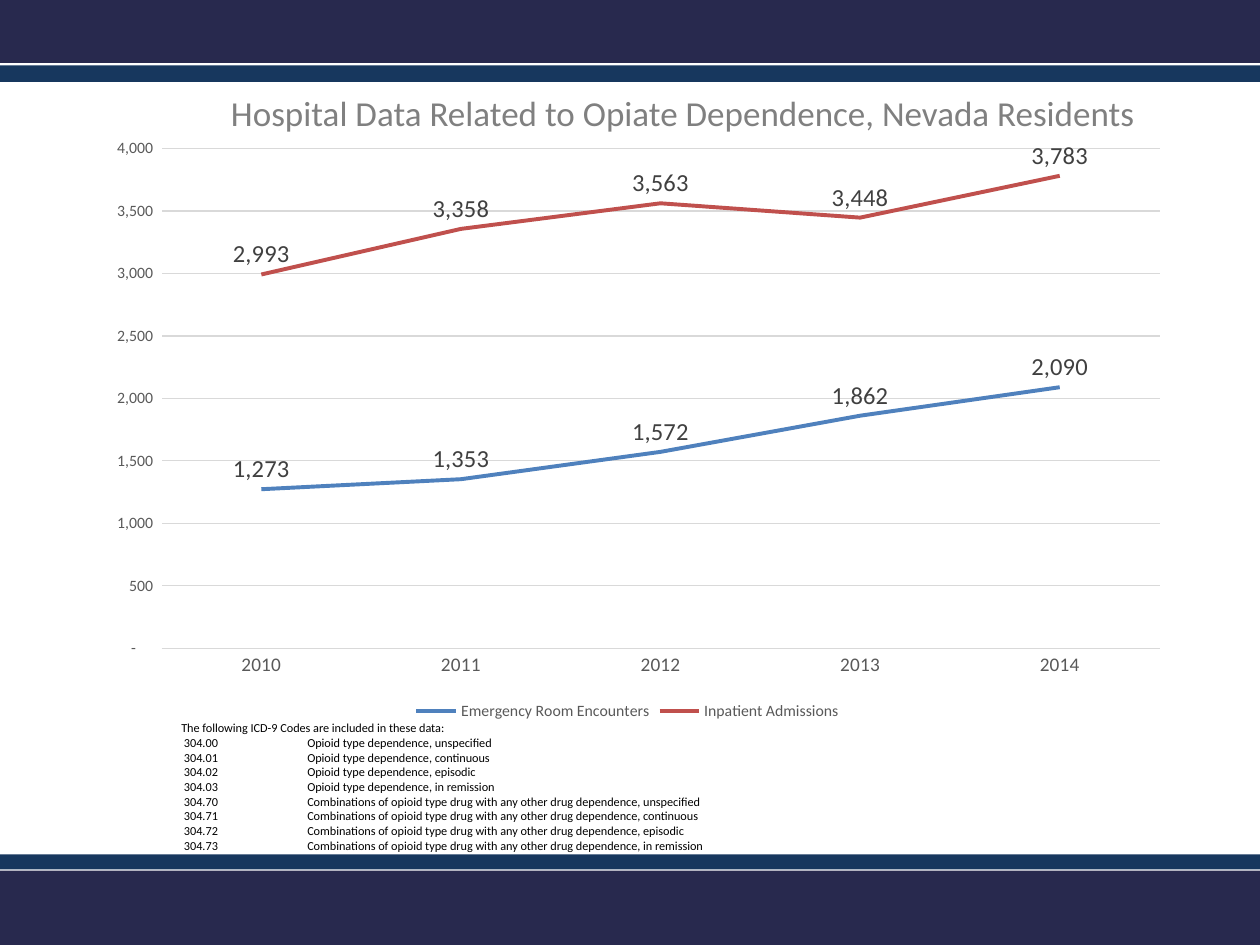
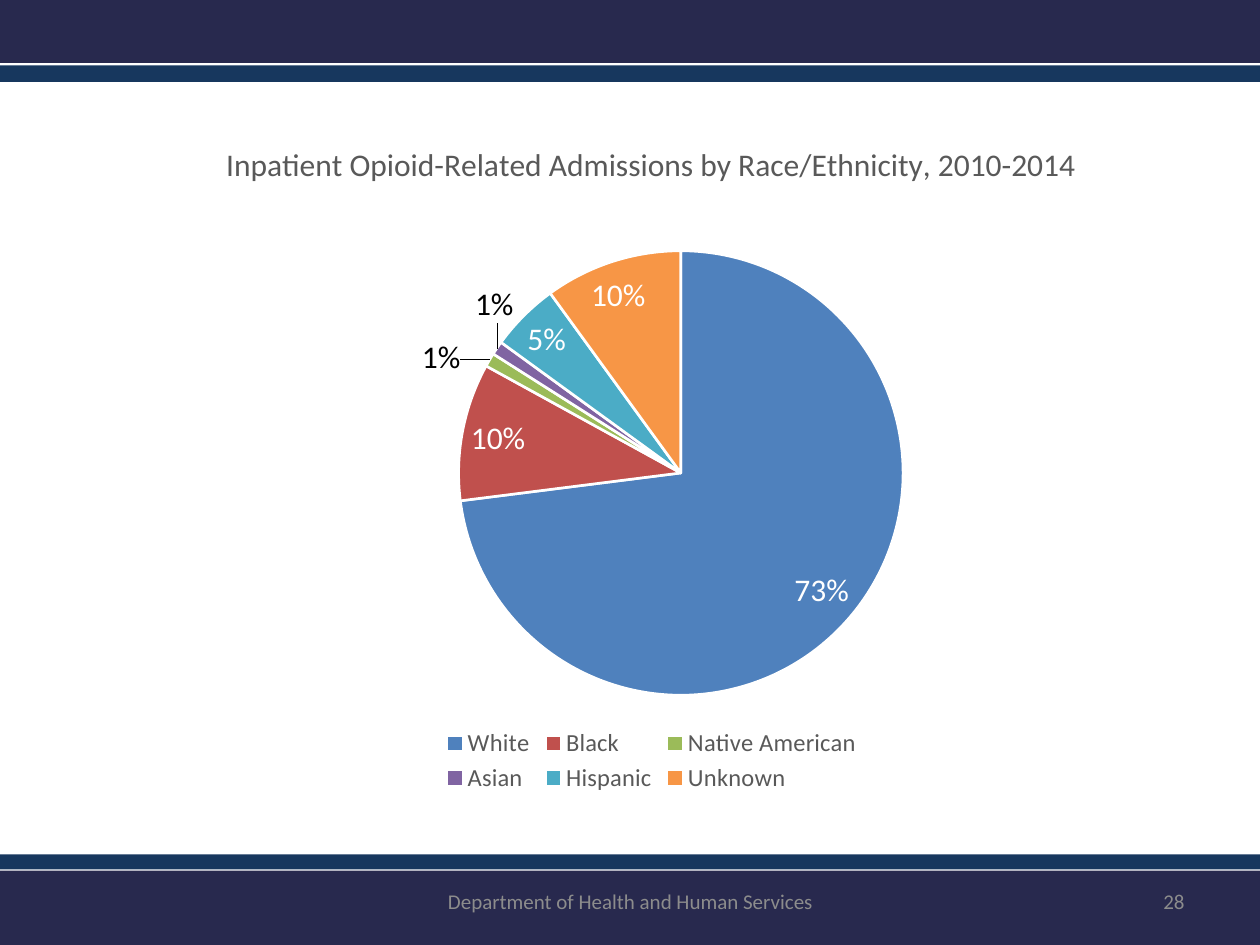
"""Build two slides on opioid hospital data: a line chart and a pie chart."""
from lxml import etree
from pptx import Presentation
from pptx import util as u
from pptx.chart import data as chart_data
from pptx.dml import color
from pptx.enum import chart as charts, shapes, text
from pptx.oxml import ns

FONT = "Calibri"
NAVY, BLUE_BAND = "28294E", "17375E"
GREY, GRID_GREY, FOOTER_GREY = "595959", "D9D9D9", "8C8C8C"
PALETTE = ["4F81BD", "C0504D", "9BBB59", "8064A2", "4BACC6", "F79646"]


def rgb(hex_colour):
    """Return a colour from a hex string."""
    return color.RGBColor.from_string(hex_colour)


def write(shape, lines, box, size, colour, align="LEFT", anchor="TOP", tab=None):
    """Place a shape and fill it with formatted paragraphs."""
    shape.left, shape.top, shape.width, shape.height = [u.Inches(n) for n in box]
    frame = shape.text_frame
    frame.word_wrap = True
    frame.vertical_anchor = text.MSO_ANCHOR[anchor]
    frame.text = lines
    for paragraph in frame.paragraphs:
        paragraph.alignment = text.PP_ALIGN[align]
        if tab:
            properties = paragraph._p.get_or_add_pPr()
            stops = etree.SubElement(properties, ns.qn("a:tabLst"))
            etree.SubElement(stops, ns.qn("a:tab"), pos=str(u.Inches(tab)), algn="l")
        paragraph.font.name = FONT
        paragraph.font.size = u.Pt(size)
        paragraph.font.color.rgb = rgb(colour)


presentation = Presentation()
presentation.slide_width = u.Inches(10)
presentation.slide_height = u.Inches(7.5)
trend_slide = presentation.slides.add_slide(presentation.slide_layouts[5])
race_slide = presentation.slides.add_slide(presentation.slide_layouts[6])

bands = [(0, 0.5, NAVY), (0.52, 0.13, BLUE_BAND),
         (6.91, 0.59, NAVY), (6.78, 0.12, BLUE_BAND)]
master_tree = presentation.slide_master.shapes._spTree
for number, (top, height, fill) in enumerate(bands):
    band = trend_slide.shapes.add_shape(
        shapes.MSO_SHAPE.RECTANGLE, 0, u.Inches(top), u.Inches(10), u.Inches(height))
    band.shadow.inherit = False
    band.fill.solid()
    band.fill.fore_color.rgb = rgb(fill)
    band.line.fill.background()
    band._element.nvSpPr.cNvPr.set("id", str(20 + number))
    master_tree.insert(2 + number, band._element)

write(trend_slide.shapes.title, "Hospital Data Related to Opiate Dependence, Nevada Residents",
      (0.92, 0.17, 9, 1.45), 20, "808080", "CENTER", "MIDDLE")

trend_data = chart_data.CategoryChartData(number_format="#,##0")
trend_data.categories = ["2010", "2011", "2012", "2013", "2014"]
trend_data.add_series("Emergency Room Encounters", [1273, 1353, 1572, 1862, 2090])
trend_data.add_series("Inpatient Admissions", [2993, 3358, 3563, 3448, 3783])
trend = trend_slide.shapes.add_chart(
    charts.XL_CHART_TYPE.LINE, u.Inches(0.67), u.Inches(1),
    u.Inches(8.62), u.Inches(4.76), trend_data).chart
trend.has_title = False

for axis in (trend.category_axis, trend.value_axis):
    axis.major_tick_mark = axis.minor_tick_mark = charts.XL_TICK_MARK.NONE
trend.category_axis.format.line.color.rgb = rgb(GRID_GREY)
trend.category_axis.format.line.width = u.Pt(0.75)
values = trend.value_axis
values.minimum_scale, values.maximum_scale, values.major_unit = 0, 4000, 500
values.format.line.fill.background()
values.major_gridlines.format.line.color.rgb = rgb(GRID_GREY)
values.major_gridlines.format.line.width = u.Pt(0.75)
values.tick_labels.number_format = '_(* #,##0_);_(* \\(#,##0\\);_(* "-"??_);_(@_)'
values.tick_labels.number_format_is_linked = False

for series, colour in zip(trend.plots[0].series, PALETTE):
    series.smooth = False
    series.marker.style = charts.XL_MARKER_STYLE.NONE
    series.format.line.color.rgb = rgb(colour)
    series.format.line.width = u.Pt(2.25)
    series.data_labels.show_value = True
    series.data_labels.number_format = "#,##0"
    series.data_labels.number_format_is_linked = False
    series.data_labels.position = charts.XL_LABEL_POSITION.ABOVE

codes = ["The following ICD-9 Codes are included in these data:"]
for prefix, kind in [("304.0", "Opioid type dependence"),
                     ("304.7", "Combinations of opioid type drug with any other drug dependence")]:
    for digit, course in enumerate(["unspecified", "continuous", "episodic", "in remission"]):
        codes.append(f" {prefix}{digit} \t{kind}, {course}")
write(trend_slide.shapes.add_textbox(0, 0, 0, 0), "\n".join(codes),
      (1.34, 5.67, 7.05, 1.16), 7, "000000", tab=1)

for words, box, align in [
        ("Department of Health and Human Services", (3.42, 6.95, 3.17, 0.4), "CENTER"),
        ("28", (7.17, 6.95, 2.33, 0.4), "RIGHT")]:
    write(race_slide.shapes.add_textbox(0, 0, 0, 0), words, box, 12, FOOTER_GREY, align, "MIDDLE")

race_data = chart_data.CategoryChartData()
race_data.categories = ["White", "Black", "Native American", "Asian", "Hispanic", "Unknown"]
race_data.add_series("Series 1", [73, 10, 1, 1, 5, 10])
race = race_slide.shapes.add_chart(
    charts.XL_CHART_TYPE.PIE, u.Inches(0.67), u.Inches(0.92),
    u.Inches(9), u.Inches(5.42), race_data).chart
race.has_title = True
race_title = race.chart_title.text_frame
race_title.text = "Inpatient Opioid-Related Admissions by Race/Ethnicity, 2010-2014"

shares = race.plots[0].series[0]
for index, colour in enumerate(PALETTE):
    wedge = shares.points[index].format
    wedge.fill.solid()
    wedge.fill.fore_color.rgb = rgb(colour)
    wedge.line.color.rgb = rgb("FFFFFF")
    wedge.line.width = u.Pt(1.5)
labels = shares.data_labels
labels.show_value = False
labels.show_percentage = True
labels.number_format = "0%"
labels.number_format_is_linked = False
labels.position = charts.XL_LABEL_POSITION.BEST_FIT

for chart in (trend, race):
    chart.has_legend = True
    chart.legend.position = charts.XL_LEGEND_POSITION.BOTTOM
    chart.legend.include_in_layout = False

fonts = [(trend.font, 10, "000000"), (trend.category_axis.tick_labels.font, 11, GREY),
         (values.tick_labels.font, 9, GREY), (trend.legend.font, 9, GREY),
         (race.font, 10, "000000"), (race.legend.font, 14, GREY),
         (race_title.paragraphs[0].runs[0].font, 18, GREY), (labels.font, 18, "FFFFFF")]
fonts += [(series.data_labels.font, 14, "404040") for series in trend.plots[0].series]

placements = [
    (trend._chartSpace.chart.plotArea, 0, (0.071, 0.038, 0.919, 0.833)),
    (race._chartSpace.chart.plotArea, 0, (0.33, 0.197, 0.392, 0.652)),
    (race.legend._element, 1, (0.313, 0.89, 0.375, 0.109)),
    (race.chart_title._element, 1, (0.12, 0.03))]

for index, shift in [(2, (-0.02, 0.03)), (3, (0.02, -0.03))]:
    label = shares.points[index].data_label
    fonts.append((label.font, 18, "000000"))
    label.position = charts.XL_LABEL_POSITION.OUTSIDE_END
    element = label._get_or_add_dLbl()
    element.find(ns.qn("c:showVal")).set("val", "0")
    element.find(ns.qn("c:showPercent")).set("val", "1")
    placements.append((element, 1, shift))

for font, size, colour in fonts:
    font.name = FONT
    font.size = u.Pt(size)
    font.bold = False
    font.color.rgb = rgb(colour)

for parent, index, numbers in placements:
    for old in parent.findall(ns.qn("c:layout")):
        parent.remove(old)
    layout = etree.Element(ns.qn("c:layout"))
    manual = etree.SubElement(layout, ns.qn("c:manualLayout"))
    settings = list(zip("xywh", numbers))
    if not parent.tag.endswith("dLbl"):
        settings = [("xMode", "edge"), ("yMode", "edge")] + settings
    if parent.tag.endswith("plotArea"):
        settings = [("layoutTarget", "inner")] + settings
    for name, value in settings:
        etree.SubElement(manual, ns.qn("c:" + name)).set("val", str(value))
    parent.insert(index, layout)

presentation.save("out.pptx")
